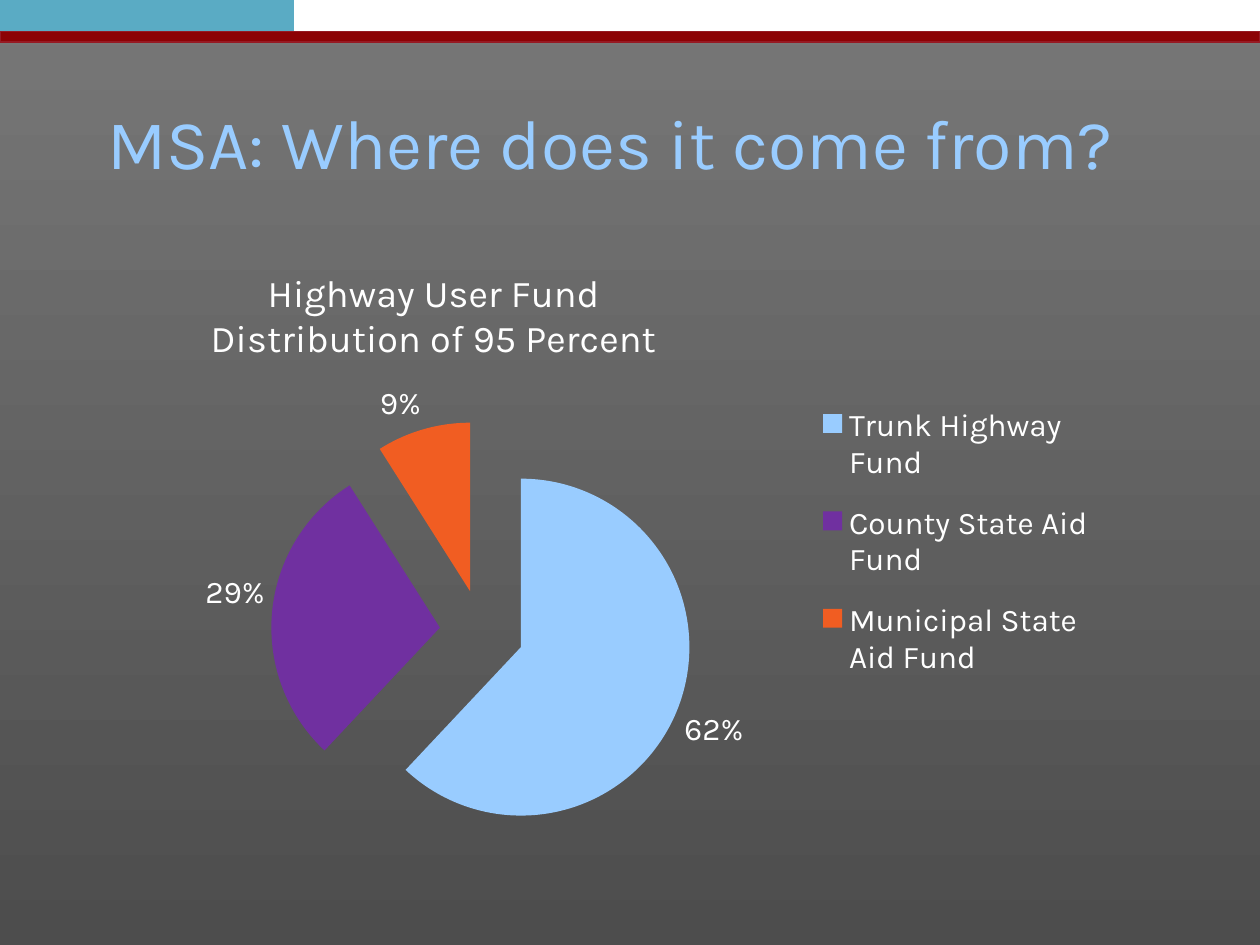
from dataclasses import dataclass
from lxml import etree
from pptx import Presentation
from pptx import util as u
from pptx.chart.data import CategoryChartData
from pptx.dml.color import RGBColor as Rgb
from pptx.enum import chart as ch, shapes, text
from pptx.oxml import ns

Pt = u.Pt


@dataclass(frozen=True)
class Theme:
    font: str = "Karla"
    head: float = 40
    cap: float = 21.6
    body: float = 18
    white: str = "FFFFFF"
    sky: str = "99CCFF"
    top: str = "777777"
    base: str = "4D4D4D"


theme = Theme()

head = "MSA: Where does it come from?"
title = ["Highway User Fund", "Distribution of 95 Percent"]
funds = [
    ("Trunk Highway Fund", 0.62, theme.sky),
    ("County State Aid Fund", 0.29, "7030A0"),
    ("Municipal State Aid Fund", 0.09, "F15D22"),
]
bands = [
    ((0, 0, 720, 18), theme.white, theme.white),
    ((-6, 0, 174, 24), "5AABC4", None),
    ((0, 18, 720, 6), "8C0205", "961A23"),
]
head_box = (54, 36, 630, 90)
chart_box = (60, 138, 582, 354)
title_at = {"x": 0.1, "y": 0.04}
plot_at = {"x": 0.16, "y": 0.29, "w": 0.42, "h": 0.68}
key_at = {"x": 0.7, "y": 0.23, "w": 0.27, "h": 0.51}


def style(font, size, color):
    font.name, font.size, font.bold = theme.font, Pt(size), False
    font.color.rgb = Rgb.from_string(color)


def paint(fill, color):
    fill.solid()
    fill.fore_color.rgb = Rgb.from_string(color)


def add_band(slide, box, fill, edge):
    band = slide.shapes.add_shape(shapes.MSO_SHAPE.RECTANGLE, *map(Pt, box))
    band.shadow.inherit = False
    paint(band.fill, fill)
    if edge:
        paint(band.line.fill, edge)
        band.line.width = Pt(0.75)
    else:
        band.line.fill.background()


def place(node, spots, inner=False):
    for old in node.findall(ns.qn("c:layout")):
        node.remove(old)
    lay = etree.Element(ns.qn("c:layout"))
    man = etree.SubElement(lay, ns.qn("c:manualLayout"))
    rows = [("layoutTarget", "inner")] if inner else []
    rows += [("xMode", "edge"), ("yMode", "edge"), *spots.items()]
    for tag, val in rows:
        etree.SubElement(man, ns.qn("c:" + tag)).set("val", str(val))
    return lay


def add_pie(slide):
    data = CategoryChartData(number_format="0%")
    data.categories = [name for name, _, _ in funds]
    data.add_series("Series 1", [val for _, val, _ in funds])
    pie = slide.shapes.add_chart(
        ch.XL_CHART_TYPE.PIE, *map(Pt, chart_box), data).chart
    style(pie.font, theme.body, theme.white)

    pie.has_title = True
    frame = pie.chart_title.text_frame
    for i, line in enumerate(title):
        para = frame.add_paragraph() if i else frame.paragraphs[0]
        para.alignment = text.PP_ALIGN.CENTER
        run = para.add_run()
        run.text = line
        style(run.font, theme.cap, theme.white)
    pie.chart_title.include_in_layout = False
    node = pie.chart_title._element
    lay = place(node, title_at)
    node.find(ns.qn("c:tx")).addnext(lay)

    pie.has_legend = True
    key = pie.legend
    key.position = ch.XL_LEGEND_POSITION.RIGHT
    key.include_in_layout = False
    style(key.font, theme.body, theme.white)
    lay = place(key._element, key_at)
    key._element.find(ns.qn("c:legendPos")).addnext(lay)

    area = pie._chartSpace.chart.plotArea
    area.insert(0, place(area, plot_at, True))

    plot = pie.plots[0]
    plot.vary_by_categories = True
    series = plot.series[0]
    for i, (_, _, color) in enumerate(funds):
        part = series.points[i].format
        paint(part.fill, color)
        part.line.fill.background()
    burst = etree.Element(ns.qn("c:explosion"))
    burst.set("val", "25")
    series._element.find(ns.qn("c:dPt")).addprevious(burst)

    plot.has_data_labels = True
    tags = plot.data_labels
    tags.show_value = True
    tags.show_percentage = False
    tags.number_format, tags.number_format_is_linked = "0%", False
    tags.position = ch.XL_LABEL_POSITION.OUTSIDE_END
    style(tags.font, theme.body, theme.white)


def main():
    deck = Presentation()
    deck.slide_width, deck.slide_height = Pt(720), Pt(540)
    slide = deck.slides.add_slide(deck.slide_layouts[5])
    back = slide.background.fill
    back.gradient()
    back.gradient_angle = 270
    for stop, color in zip(back.gradient_stops, (theme.top, theme.base)):
        stop.color.rgb = Rgb.from_string(color)

    for band in bands:
        add_band(slide, *band)

    box = slide.shapes.title
    box.left, box.top, box.width, box.height = map(Pt, head_box)
    frame = box.text_frame
    frame.word_wrap = True
    frame.vertical_anchor = text.MSO_ANCHOR.MIDDLE
    para = frame.paragraphs[0]
    para.alignment = text.PP_ALIGN.LEFT
    run = para.add_run()
    run.text = head
    style(run.font, theme.head, theme.sky)

    add_pie(slide)
    deck.save("out.pptx")


if __name__ == "__main__":
    main()
